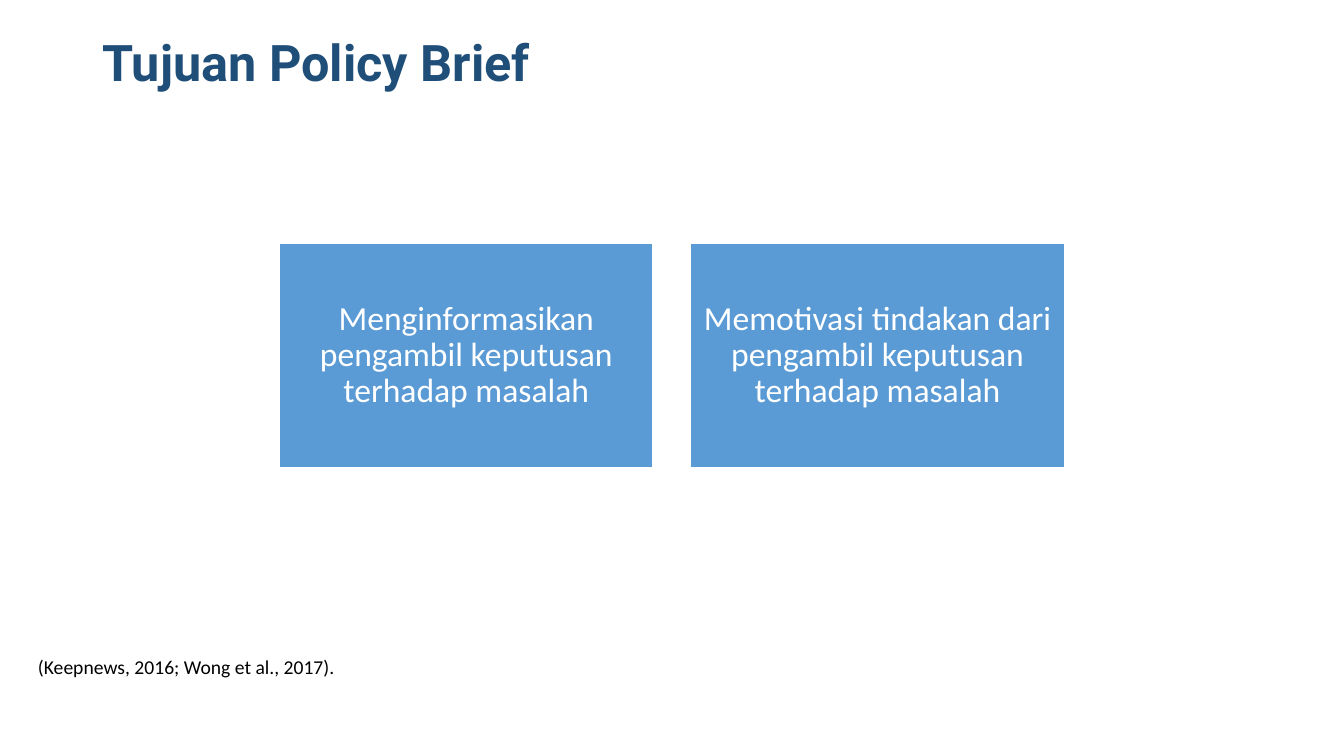
import pptx
import pptx.dml.color
import pptx.enum.shapes
import pptx.enum.text
import pptx.util

Pt = pptx.util.Pt
ALIGN = pptx.enum.text.PP_ALIGN
ANCHOR = pptx.enum.text.MSO_ANCHOR

COLORS = {"navy": "1F4E79", "blue": "5B9BD5", "white": "FFFFFF", "black": "000000"}


class SlideBuilder:
    def __init__(self, slide, body_font="Calibri"):
        self.slide = slide
        self.body_font = body_font

    def color(self, name):
        return pptx.dml.color.RGBColor.from_string(COLORS[name])

    def set_text(self, shape, text, size, color, font=None, bold=False,
                 align=ALIGN.LEFT, anchor=ANCHOR.TOP, line_spacing=1.0):
        text_frame = shape.text_frame
        text_frame.text = text
        text_frame.word_wrap = True
        text_frame.vertical_anchor = anchor
        paragraph = text_frame.paragraphs[0]
        paragraph.alignment = align
        paragraph.line_spacing = line_spacing
        run_font = paragraph.runs[0].font
        run_font.name = font or self.body_font
        run_font.size = Pt(size)
        run_font.bold = bold
        run_font.color.rgb = self.color(color)
        return text_frame

    def text_box(self, left, top, width, height, text, size, color, **style):
        box = self.slide.shapes.add_textbox(Pt(left), Pt(top), Pt(width), Pt(height))
        return self.set_text(box, text, size, color, **style)

    def card(self, left, top, width, height, text):
        shape = self.slide.shapes.add_shape(
            pptx.enum.shapes.MSO_SHAPE.RECTANGLE, Pt(left), Pt(top), Pt(width), Pt(height))
        shape.shadow.inherit = False
        shape.fill.solid()
        shape.fill.fore_color.rgb = self.color("blue")
        shape.line.color.rgb = self.color("white")
        shape.line.width = Pt(1)
        text_frame = self.set_text(shape, text, 24, "white", align=ALIGN.CENTER,
                                   anchor=ANCHOR.MIDDLE, line_spacing=0.9)
        text_frame.margin_left = text_frame.margin_right = Pt(7.2)
        text_frame.margin_top = text_frame.margin_bottom = Pt(7.2)


def main():
    presentation = pptx.Presentation()
    presentation.slide_width = Pt(960)
    presentation.slide_height = Pt(540)
    slide = presentation.slides.add_slide(presentation.slide_layouts[6])
    builder = SlideBuilder(slide)

    # Title
    builder.text_box(66, 15, 828, 62.6, "Tujuan Policy Brief", 36, "navy", font="Roboto",
                     bold=True, anchor=ANCHOR.MIDDLE, line_spacing=0.9)

    # Two goals side by side
    card_width, card_gap = 267, 26.7
    goals = ["Menginformasikan pengambil keputusan terhadap masalah",
             "Memotivasi tindakan dari pengambil keputusan terhadap masalah"]
    for index, goal in enumerate(goals):
        builder.card(199.6 + index * (card_width + card_gap), 173.7, card_width, 160.3, goal)

    # Citation
    citation = builder.text_box(20, 464, 480, 24.2, "(Keepnews, 2016; Wong et al., 2017).",
                                14, "black")
    citation.auto_size = pptx.enum.text.MSO_AUTO_SIZE.SHAPE_TO_FIT_TEXT

    presentation.save("out.pptx")


if __name__ == "__main__":
    main()
